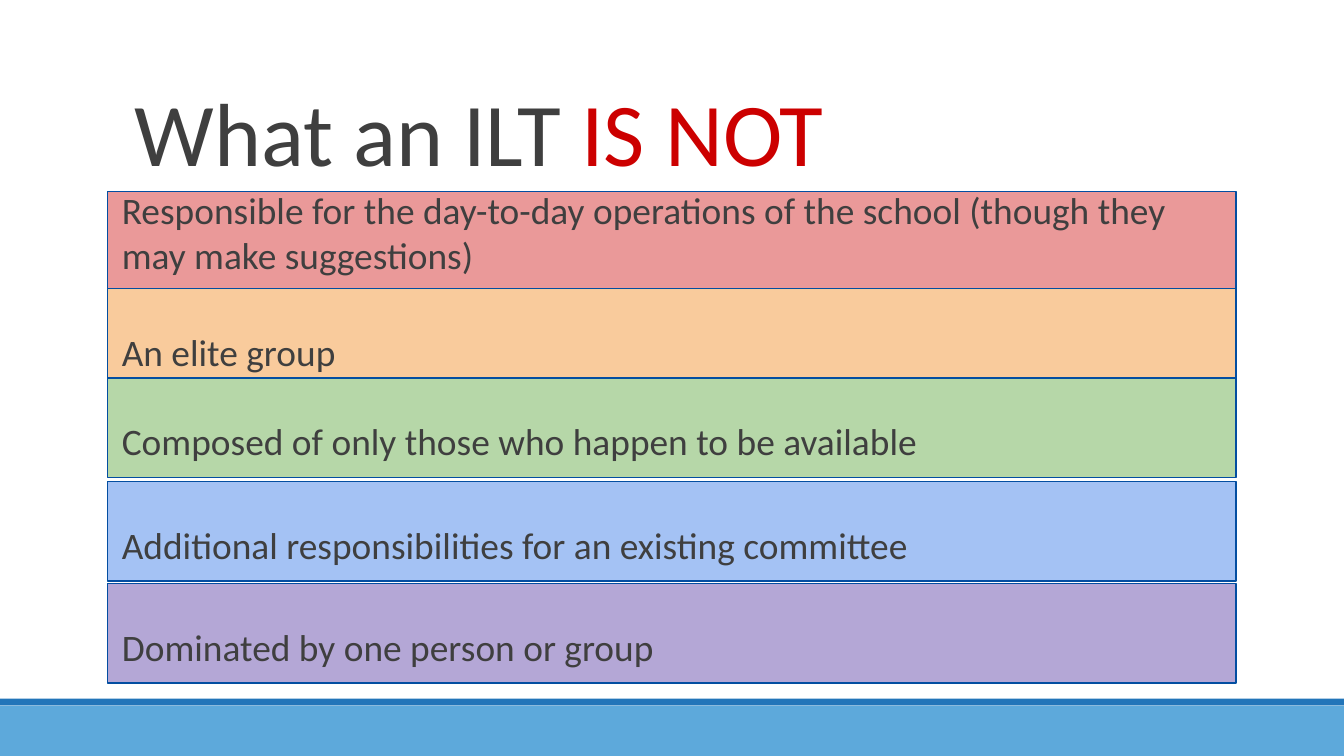
"""Build the slide that lists what an ILT is not."""
from dataclasses import dataclass

import pptx
import pptx.dml.color
import pptx.enum.shapes
import pptx.enum.text
import pptx.util

EMU_PER_PX = 9525
SLIDE_WIDTH, SLIDE_HEIGHT = 960, 540
BAND_LEFT, BAND_WIDTH, BAND_HEIGHT = 77, 806, 71


@dataclass(frozen=True)
class Theme:
    font: str = "Calibri"
    ink: str = "3F3F3F"
    accent: str = "CC0000"
    outline: str = "034EA1"
    footer: str = "5DA9DB"
    footer_edge: str = "2275B9"
    title_size: int = 48
    body_size: int = 20
    line_width: float = 0.75


@dataclass(frozen=True)
class Band:
    top: int
    fill: str
    text: str


THEME = Theme()
BANDS = (
    Band(137, "EA9999", "Responsible for the day-to-day operations of the school "
                        "(though they may make suggestions)"),
    Band(206, "F9CB9C", "An elite group"),
    Band(270, "B6D7A8", "Composed of only those who happen to be available"),
    Band(344, "A4C2F4", "Additional responsibilities for an existing committee"),
    Band(417, "B4A7D6", "Dominated by one person or group"),
)


def px(length: int) -> pptx.util.Emu:
    return pptx.util.Emu(length * EMU_PER_PX)


def rgb(value: str) -> pptx.dml.color.RGBColor:
    return pptx.dml.color.RGBColor.from_string(value)


def add_span(para, text: str, size: int, color: str) -> None:
    span = para.add_run()
    span.text = text
    span.font.name = THEME.font
    span.font.size = pptx.util.Pt(size)
    span.font.color.rgb = rgb(color)


def format_frame(frame, side: int, vertical: int) -> None:
    frame.word_wrap = True
    frame.auto_size = pptx.enum.text.MSO_AUTO_SIZE.NONE
    frame.vertical_anchor = pptx.enum.text.MSO_ANCHOR.BOTTOM
    frame.margin_left = frame.margin_right = px(side)
    frame.margin_top = frame.margin_bottom = px(vertical)
    frame.paragraphs[0].alignment = pptx.enum.text.PP_ALIGN.LEFT


def add_rectangle(page, left: int, top: int, width: int, height: int, fill: str):
    box = page.shapes.add_shape(
        pptx.enum.shapes.MSO_SHAPE.RECTANGLE, px(left), px(top), px(width), px(height))
    box.shadow.inherit = False
    box.fill.solid()
    box.fill.fore_color.rgb = rgb(fill)
    box.line.fill.background()
    return box


def add_band(page, band: Band) -> None:
    box = add_rectangle(page, BAND_LEFT, band.top, BAND_WIDTH, BAND_HEIGHT, band.fill)
    box.line.color.rgb = rgb(THEME.outline)
    box.line.width = pptx.util.Pt(THEME.line_width)
    format_frame(box.text_frame, 10, 10)
    add_span(box.text_frame.paragraphs[0], band.text, THEME.body_size, THEME.ink)


def fill_title(page) -> None:
    title = page.shapes.title
    title.left, title.top, title.width, title.height = px(86), px(23), px(792), px(114)
    format_frame(title.text_frame, 10, 5)
    para = title.text_frame.paragraphs[0]
    para.line_spacing = 0.85
    add_span(para, "What an ILT ", THEME.title_size, THEME.ink)
    add_span(para, "IS NOT", THEME.title_size, THEME.accent)


def main() -> None:
    deck = pptx.Presentation()
    deck.slide_width, deck.slide_height = px(SLIDE_WIDTH), px(SLIDE_HEIGHT)
    page = deck.slides.add_slide(deck.slide_layouts.get_by_name("Title Only"))
    add_rectangle(page, 0, 504, SLIDE_WIDTH, 36, THEME.footer)
    add_rectangle(page, 0, 499, SLIDE_WIDTH, 5, THEME.footer_edge)
    fill_title(page)
    for band in BANDS:
        add_band(page, band)
    deck.save("out.pptx")


if __name__ == "__main__":
    main()
